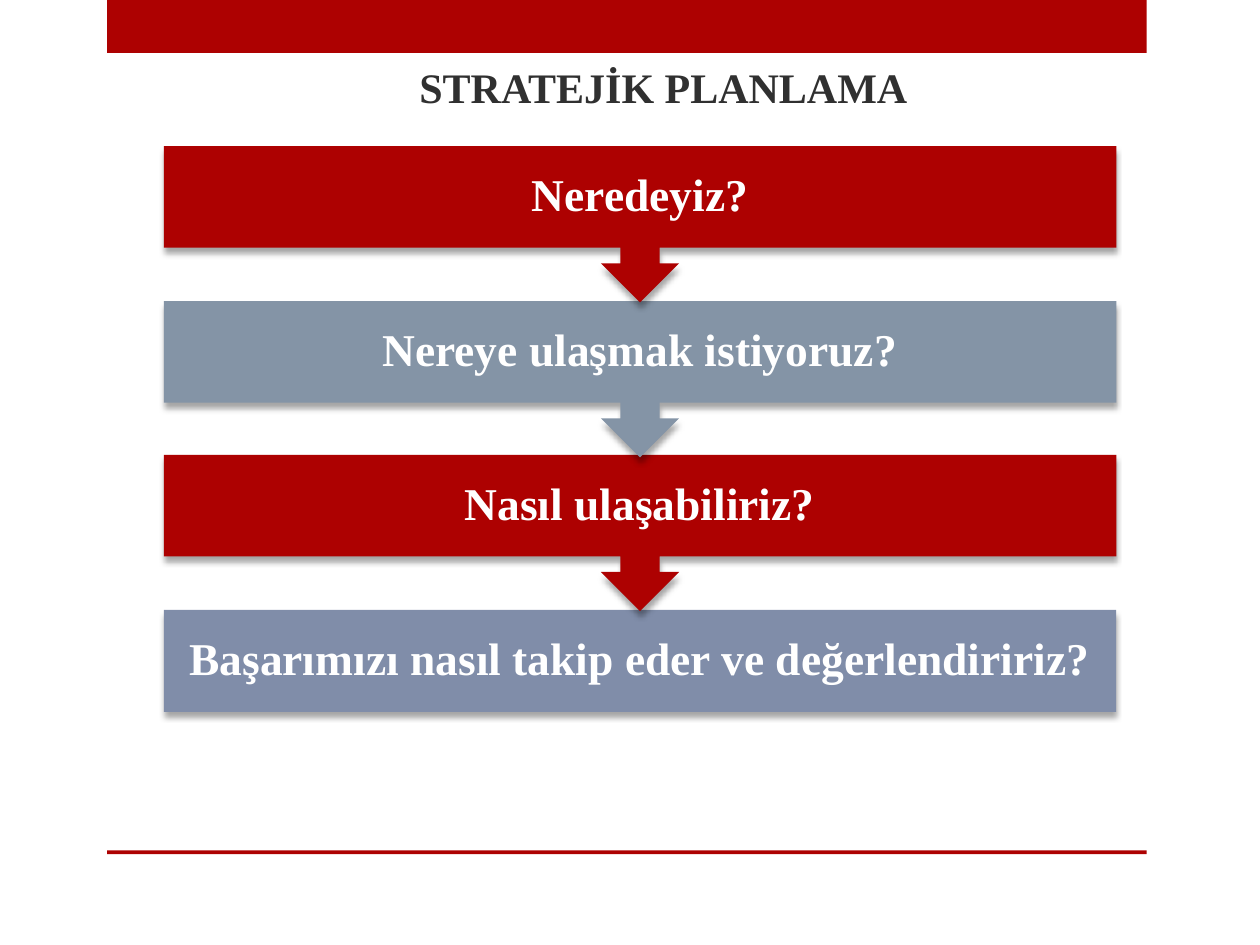
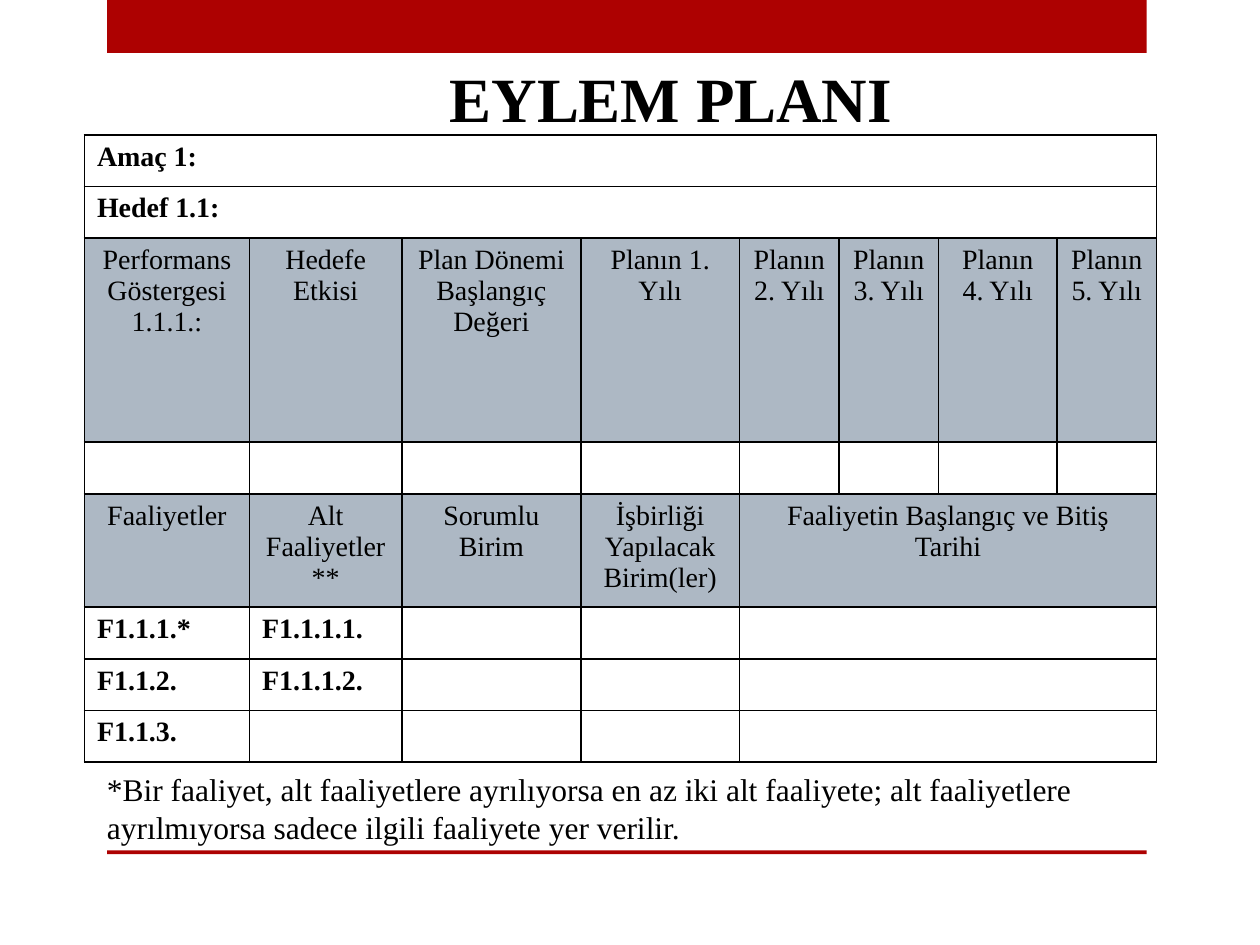
"""Build two slides on strategic planning: a chain of questions and an action plan table."""
from lxml.etree import SubElement
from pptx import Presentation
from pptx.dml.color import RGBColor
from pptx.enum.shapes import MSO_SHAPE
from pptx.enum.text import MSO_ANCHOR, PP_ALIGN
from pptx.oxml import parse_xml
from pptx.oxml.ns import nsdecls, qn
from pptx.util import Pt

PX = 9144
FONT = "Times New Roman"
RED = RGBColor(0xAD, 0x01, 0x01)
STEEL = RGBColor(0x84, 0x94, 0xA6)
SLATE = RGBColor(0x80, 0x8D, 0xA9)
HEADER = RGBColor(0xAD, 0xB8, 0xC4)
CHARCOAL = RGBColor(0x30, 0x30, 0x30)
BLACK = RGBColor(0, 0, 0)
WHITE = RGBColor(255, 255, 255)
SHADOW = f"""<a:effectLst {nsdecls("a")}>
<a:outerShdw blurRad="38100" dist="38100" dir="5400000" rotWithShape="0">
<a:srgbClr val="000000"><a:alpha val="35000"/></a:srgbClr></a:outerShdw></a:effectLst>"""


def write(frame, text, color, size, bold=False, **layout):
    frame.word_wrap = True
    para = frame.paragraphs[0]
    for name, value in layout.items():
        setattr(para, name, value)
    span = para.add_run()
    span.text = text
    for name, value in {"name": FONT, "size": Pt(size), "bold": bold}.items():
        setattr(span.font, name, value)
    span.font.color.rgb = color


def add_block(page, kind, place, color):
    block = page.shapes.add_shape(kind, *[length * PX for length in place])
    block.shadow.inherit = False
    block.fill.solid()
    block.fill.fore_color.rgb = color
    block.line.fill.background()
    return block


deck = Presentation()
deck.slide_width, deck.slide_height = 1000 * PX, 750 * PX
questions_page, plan_page = [deck.slides.add_slide(deck.slide_layouts[6]) for _ in range(2)]
for page in (questions_page, plan_page):
    for top, height in ((0, 42), (675, 3)):
        add_block(page, MSO_SHAPE.RECTANGLE, (85, top, 825, height), RED)

questions = [
    ("Neredeyiz?", RED),
    ("Nereye ulaşmak istiyoruz?", STEEL),
    ("Nasıl ulaşabiliriz?", RED),
    ("Başarımızı nasıl takip eder ve değerlendiririz?", SLATE),
]
last = len(questions) - 1
for step in range(last, -1, -1):
    question, color = questions[step]
    kind, height = (MSO_SHAPE.RECTANGLE, 81) if step == last else (MSO_SHAPE.DOWN_ARROW_CALLOUT, 124)
    top = 116 + round(step * 368 / last)
    block = add_block(questions_page, kind, (130, top, 756, height), color)
    properties = block._element.spPr
    properties.replace(properties.find(qn("a:effectLst")), parse_xml(SHADOW))
    frame = block.text_frame
    for side in ("left", "top", "right", "bottom"):
        setattr(frame, f"margin_{side}", 20 * PX)
    frame.vertical_anchor = MSO_ANCHOR.MIDDLE
    write(frame, question, WHITE, 26, True, alignment=PP_ALIGN.CENTER, line_spacing=0.9)

rows = [
    ["Amaç 1:"],
    ["Hedef 1.1:"],
    ["Performans Göstergesi 1.1.1.:", "Hedefe Etkisi", "Plan Dönemi Başlangıç Değeri"]
    + [f"Planın {year}. Yılı" for year in range(1, 6)],
    [],
    ["Faaliyetler", "Alt Faaliyetler **", "Sorumlu Birim", "İşbirliği Yapılacak Birim(ler)",
     "Faaliyetin Başlangıç ve Bitiş Tarihi"],
    ["F1.1.1.*", "F1.1.1.1."],
    ["F1.1.2.", "F1.1.1.2."],
    ["F1.1.3."],
]
column_widths = [131, 121, 142, 126, 79, 79, 94, 79]
row_heights = [41, 41, 162, 41, 90, 41, 41, 41]
header_rows = (2, 4)
merge_starts = {0: 0, 1: 0, 4: 4, 5: 4, 6: 4, 7: 4}

place = (67, 107, sum(column_widths), sum(row_heights))
table = plan_page.shapes.add_table(
    len(rows), len(column_widths), *[length * PX for length in place]).table
table.first_row = table.horz_banding = False
for column, width in zip(table.columns, column_widths):
    column.width = width * PX
for row, height in zip(table.rows, row_heights):
    row.height = height * PX
for index, texts in enumerate(rows):
    is_header = index in header_rows
    for number in range(len(column_widths)):
        cell = table.cell(index, number)
        properties = cell._tc.get_or_add_tcPr()
        for side in "LRTB":
            border = SubElement(properties, qn(f"a:ln{side}"), w="12700")
            SubElement(SubElement(border, qn("a:solidFill")), qn("a:srgbClr"), val=str(BLACK))
        if is_header:
            cell.fill.solid()
            cell.fill.fore_color.rgb = HEADER
        else:
            cell.fill.background()
        if number < len(texts):
            alignment = PP_ALIGN.CENTER if is_header else PP_ALIGN.LEFT
            write(cell.text_frame, texts[number], BLACK, 16, not is_header, alignment=alignment)
    if index in merge_starts:
        table.cell(index, merge_starts[index]).merge(table.cell(index, len(column_widths) - 1))

footnote = ("*Bir faaliyet, alt faaliyetlere ayrılıyorsa en az iki alt faaliyete; "
            "alt faaliyetlere ayrılmıyorsa sadece ilgili faaliyete yer verilir.")
centered = {"alignment": PP_ALIGN.CENTER}
captions = [
    (questions_page, (114, 44, 825, 72), "STRATEJİK PLANLAMA", CHARCOAL, 24, True,
     {**centered, "space_before": Pt(4)}),
    (plan_page, (182, 42, 701, 65), "EYLEM PLANI", BLACK, 36, True, centered),
    (plan_page, (75, 606, 787, 68), footnote, BLACK, 18, False, {}),
]
for page, place, text, color, size, bold, layout in captions:
    box = page.shapes.add_textbox(*[length * PX for length in place])
    write(box.text_frame, text, color, size, bold, **layout)

deck.save("out.pptx")
